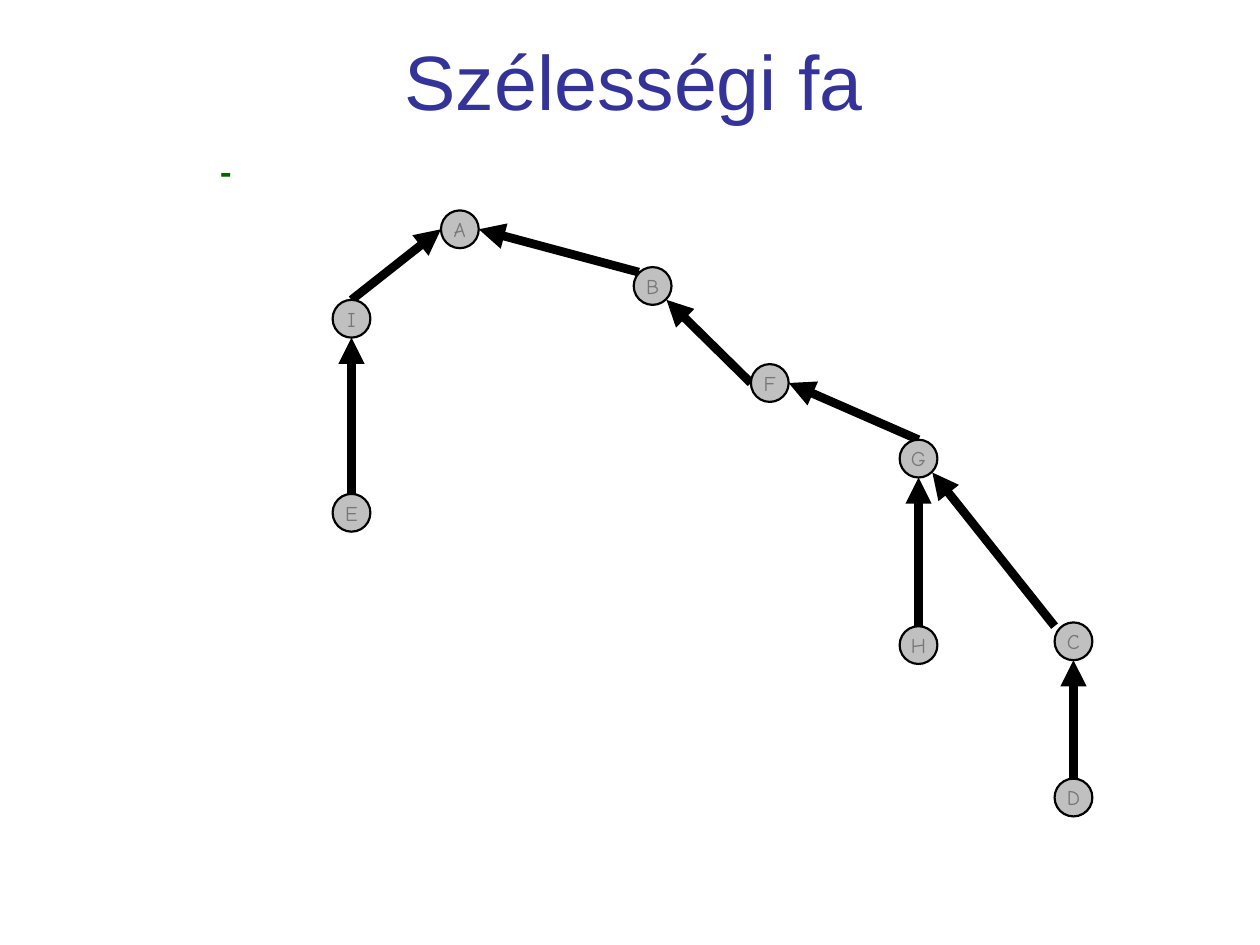
from pptx import Presentation
from pptx.dml.color import RGBColor
from pptx.enum.shapes import MSO_CONNECTOR as Link, MSO_SHAPE as Form
from pptx.enum.text import MSO_ANCHOR as Anchor, MSO_AUTO_SIZE as Fit, PP_ALIGN as Align
from pptx.oxml.ns import qn
from pptx.util import Inches, Pt
from lxml.etree import SubElement

SIZE = 0.3
NODES = {
    "A": (3.5, 1.67), "B": (5.03, 2.12), "C": (8.37, 4.94),
    "D": (8.37, 6.18), "E": (2.64, 3.92), "F": (5.96, 2.89),
    "G": (7.14, 3.49), "H": (7.14, 4.97), "I": (2.64, 2.38),
}
# Where an arrow meets a node, measured from the corner of the node's box
PORTS = {
    "top": (0.15, 0), "bottom": (0.15, 0.3),
    "left": (0, 0.15), "right": (0.3, 0.15),
    "upper left": (0.04, 0.04), "lower right": (0.26, 0.26),
    "corner": (0, 0.03),
}
# Child, its port, parent, its port
EDGES = [
    ("I", "top", "A", "left"),
    ("F", "left", "B", "lower right"),
    ("E", "top", "I", "bottom"),
    ("B", "upper left", "A", "right"),
    ("H", "top", "G", "bottom"),
    ("D", "top", "C", "bottom"),
    ("G", "top", "F", "right"),
    ("C", "corner", "G", "lower right"),
]


def color(code):
    return RGBColor.from_string(code)


def write(frame, text, font, size, code, align=Align.LEFT, bold=False):
    par = frame.paragraphs[0]
    par.alignment = align
    run = par.add_run()
    run.text = text
    run.font.name = font
    run.font.size = Pt(size)
    run.font.bold = bold
    run.font.color.rgb = color(code)


def place(shape, left, top, width, height):
    shape.left, shape.top = Inches(left), Inches(top)
    shape.width, shape.height = Inches(width), Inches(height)


def add_title(slide, box):
    title = slide.shapes.title
    place(title, *box)
    title.text_frame.vertical_anchor = Anchor.MIDDLE
    write(title.text_frame, "Szélességi fa", "Arial", 44, "333399", Align.CENTER)


def add_dash(slide, box):
    frame = slide.shapes.add_textbox(*map(Inches, box)).text_frame
    frame.word_wrap = True
    frame.auto_size = Fit.SHAPE_TO_FIT_TEXT
    write(frame, "-", "Courier New", 18, "006600", bold=True)


def add_node(slide, name, left, top):
    node = slide.shapes.add_shape(Form.OVAL, *map(Inches, (left, top, SIZE, SIZE)))
    node.shadow.inherit = False
    node.fill.solid()
    node.fill.fore_color.rgb = color("C0C0C0")
    node.line.color.rgb = color("000000")
    node.line.width = Pt(1.25)
    frame = node.text_frame
    frame.word_wrap = False
    frame.vertical_anchor = Anchor.MIDDLE
    write(frame, name, "Comic Neue", 12, "777777", Align.CENTER)


def add_arrow(slide, start, end):
    arrow = slide.shapes.add_connector(Link.STRAIGHT, *map(Inches, start + end))
    arrow.line.color.rgb = color("000000")
    arrow.line.width = Pt(5)
    SubElement(arrow.line._get_or_add_ln(), qn("a:tailEnd"), type="triangle")
    SubElement(arrow._element.spPr, qn("a:effectLst"))


def add_tree(slide, left, top):
    """Draw the arrows from child to parent, then the nodes over them."""
    def port(name, side):
        (x, y), (dx, dy) = NODES[name], PORTS[side]
        return left + x + dx, top + y + dy

    for child, out, parent, into in EDGES:
        add_arrow(slide, port(child, out), port(parent, into))
    for name, (x, y) in NODES.items():
        add_node(slide, name, left + x, top + y)


def main():
    deck = Presentation()
    deck.slide_width, deck.slide_height = Inches(10), Inches(7.5)
    slide = deck.slides.add_slide(deck.slide_layouts[5])
    add_title(slide, (0.97, 0.01, 8.12, 1.25))
    add_dash(slide, (1.62, 1.16, 0.37, 0.4))
    add_tree(slide, 0, 0)
    deck.save("out.pptx")


if __name__ == "__main__":
    main()
